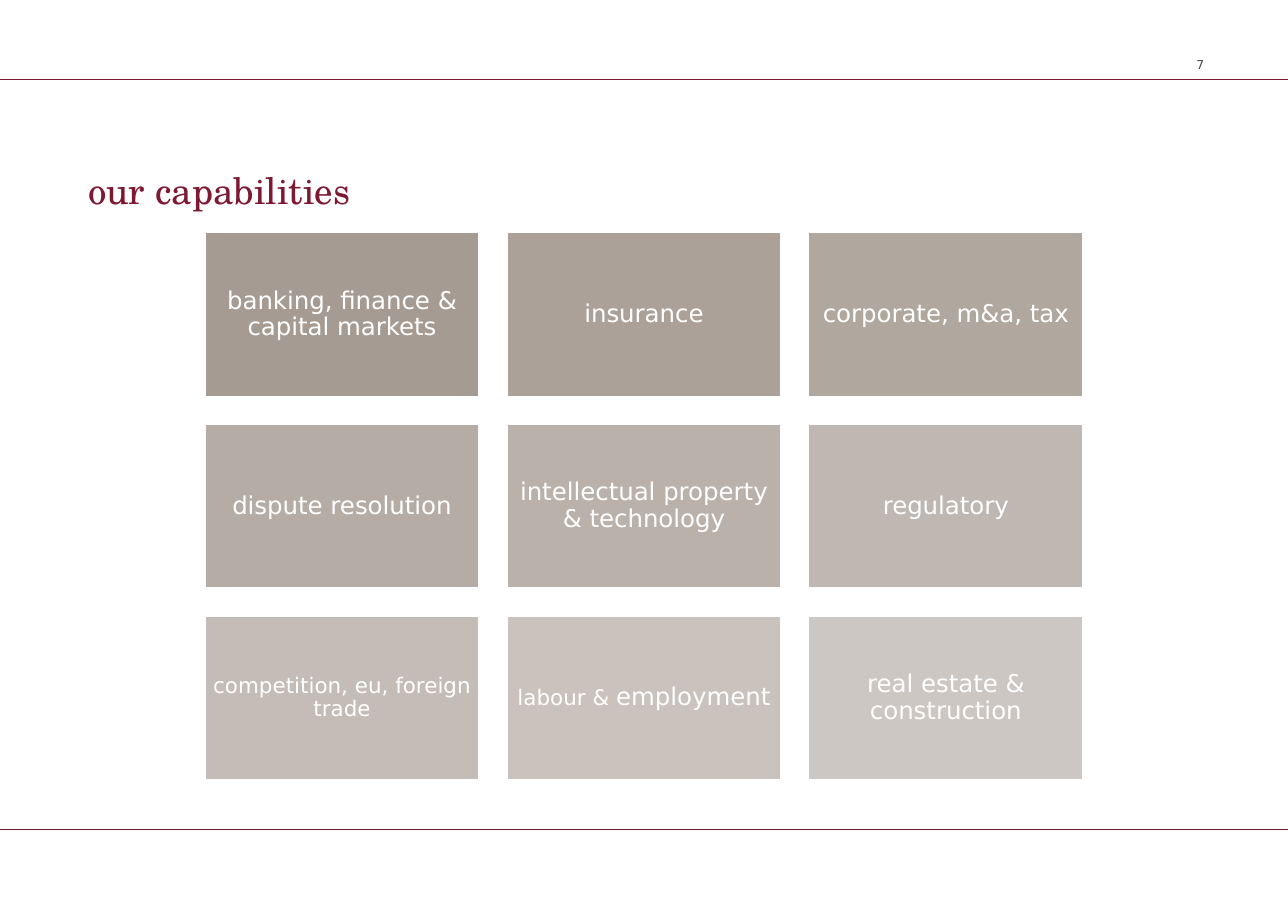
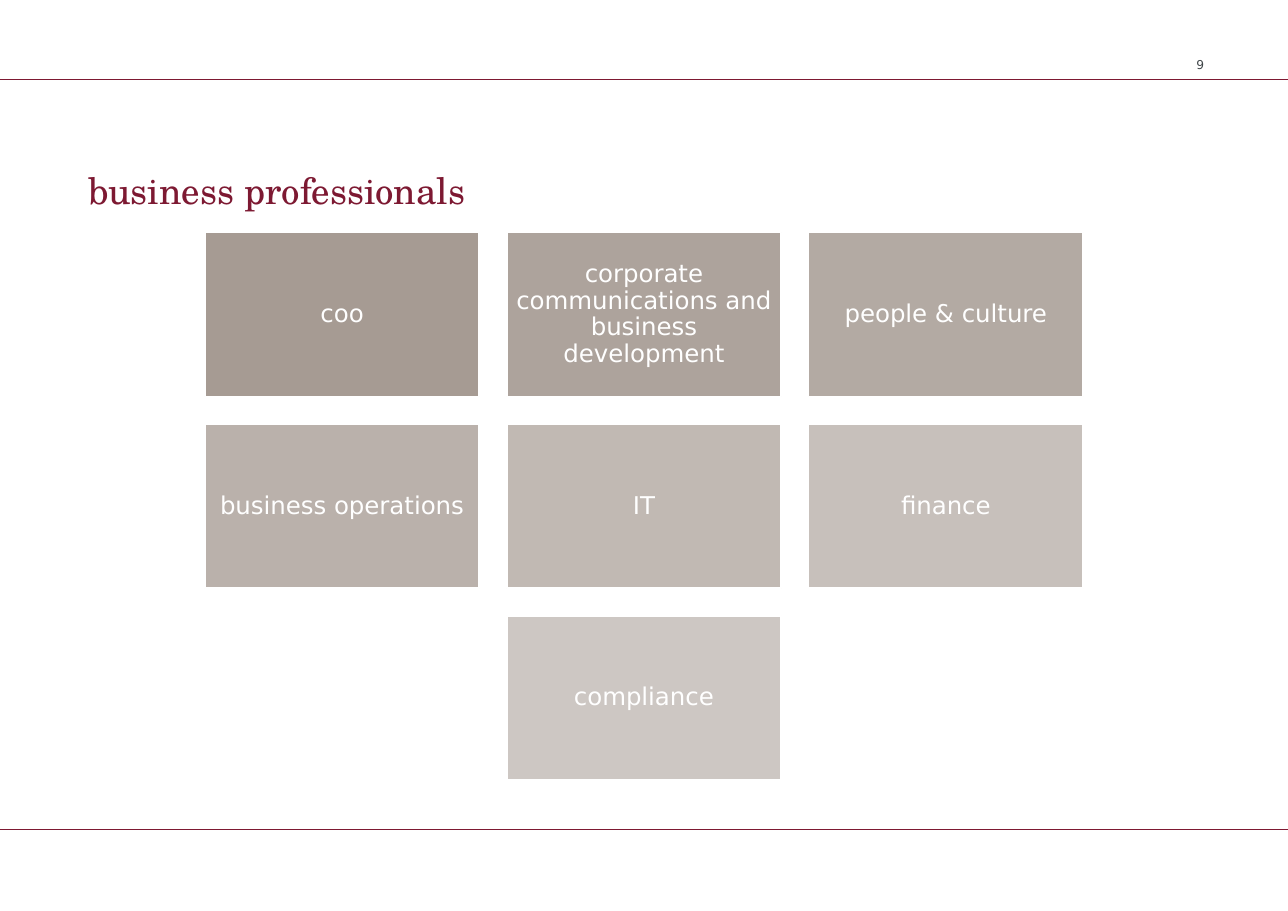
from lxml.etree import SubElement
from pptx import Presentation
from pptx.dml.color import RGBColor
from pptx.enum.shapes import MSO_CONNECTOR, MSO_SHAPE
from pptx.enum.text import MSO_ANCHOR, MSO_AUTO_SIZE, PP_ALIGN
from pptx.oxml.ns import qn
from pptx.util import Inches, Pt

# Content: page number, title, tiles; a tile is a list of (text, size) runs
SLIDES = [
    (7, "our capabilities", [
        [("banking, finance & capital markets", 16)],
        [("insurance", 16)],
        [("corporate, m&a, tax", 16)],
        [("dispute resolution", 16)],
        [("intellectual property & technology", 16)],
        [("regulatory", 16)],
        [("competition, eu, foreign trade", 14)],
        [("labour & ", 14), ("employment", 16)],
        [("real estate & construction", 16)],
    ]),
    (9, "business professionals", [
        [("coo", 16)],
        [("corporate communications and business development", 16)],
        [("people & culture", 16)],
        [("business operations", 16)],
        [("IT", 16)],
        [("finance", 16)],
        [("compliance", 16)],
    ]),
]

# Shared look
WINE = RGBColor(0x7D, 0x19, 0x32)
TAUPE = RGBColor(0x9D, 0x91, 0x88)
SLATE = RGBColor(0x40, 0x46, 0x49)
WHITE = RGBColor(0xFF, 0xFF, 0xFF)
SANS, SERIF = "DejaVu Sans", "TeX Gyre Schola"

SLIDE_W, SLIDE_H = 11.69, 8.27
RULE_TOPS = (0.72, 7.53)
COLUMNS, GRID_TOP = 3, 2.11
TILE_W, TILE_H, GAP = 2.49, 1.49, 0.25
OPACITY_FIRST, OPACITY_LAST = 90, 50


def set_all(target, formats):
    for name, value in formats.items():
        setattr(target, name, value)


def format_frame(frame, anchor, inset=0):
    margins = ("margin_left", "margin_top", "margin_right", "margin_bottom")
    set_all(frame, dict.fromkeys(margins, Inches(inset)))
    set_all(frame, {"word_wrap": True, "vertical_anchor": anchor,
                    "auto_size": MSO_AUTO_SIZE.NONE})


def write(paragraph, runs, font_name, color, alignment, line_spacing=0.9):
    set_all(paragraph, {"alignment": alignment, "line_spacing": line_spacing})
    for text, size in runs:
        run = paragraph.add_run()
        run.text = text
        set_all(run.font, {"name": font_name, "size": Pt(size)})
        run.font.color.rgb = color


def add_frame(slide, page_number, heading):
    # Rules across the slide
    for top in RULE_TOPS:
        rule = slide.shapes.add_connector(
            MSO_CONNECTOR.STRAIGHT, 0, Inches(top), Inches(SLIDE_W), Inches(top))
        rule.line.color.rgb = WINE
        rule.line.width = Pt(1)
        SubElement(rule._element.spPr, qn("a:effectLst"))

    # Page number
    number = slide.shapes.add_textbox(
        Inches(10.49), Inches(0.52), Inches(0.44), Inches(0.13)).text_frame
    format_frame(number, MSO_ANCHOR.TOP)
    write(number.paragraphs[0], [(str(page_number), 8)], SANS, SLATE,
          PP_ALIGN.RIGHT, 1.0)

    # Title
    title = slide.shapes.title
    set_all(title, {"left": Inches(0.8), "top": Inches(1.57),
                    "width": Inches(10.09), "height": Inches(0.52)})
    format_frame(title.text_frame, MSO_ANCHOR.TOP)
    write(title.text_frame.paragraphs[0], [(heading, 24)], SERIF, WINE,
          PP_ALIGN.LEFT)


def add_tile(slide, runs, left, top, opacity):
    tile = slide.shapes.add_shape(
        MSO_SHAPE.RECTANGLE, Inches(left), Inches(top),
        Inches(TILE_W), Inches(TILE_H))
    tile.shadow.inherit = False
    tile.fill.solid()
    tile.fill.fore_color.rgb = TAUPE
    fill_color = tile._element.spPr.find(qn("a:solidFill")).find(qn("a:srgbClr"))
    SubElement(fill_color, qn("a:alpha"), val=str(opacity * 1000))
    tile.line.color.rgb = WHITE
    tile.line.width = Pt(1)
    first_size = runs[0][1]
    format_frame(tile.text_frame, MSO_ANCHOR.MIDDLE,
                 0.07 if first_size == 16 else 0.06)
    write(tile.text_frame.paragraphs[0], runs, SANS, WHITE, PP_ALIGN.CENTER)


def add_tiles(slide, tiles):
    # Each row is centred; the tiles fade evenly from first to last
    fade = (OPACITY_FIRST - OPACITY_LAST) / (len(tiles) - 1)
    for index, runs in enumerate(tiles):
        row, column = divmod(index, COLUMNS)
        in_row = min(COLUMNS, len(tiles) - row * COLUMNS)
        row_width = in_row * TILE_W + (in_row - 1) * GAP
        left = (SLIDE_W - row_width) / 2 + column * (TILE_W + GAP)
        top = GRID_TOP + row * (TILE_H + GAP)
        add_tile(slide, runs, left, top, round(OPACITY_FIRST - index * fade))


def main():
    deck = Presentation()
    set_all(deck, {"slide_width": Inches(SLIDE_W), "slide_height": Inches(SLIDE_H)})
    title_only = deck.slide_layouts[5]
    for page_number, heading, tiles in SLIDES:
        slide = deck.slides.add_slide(title_only)
        add_frame(slide, page_number, heading)
        add_tiles(slide, tiles)
    deck.save("out.pptx")


if __name__ == "__main__":
    main()
